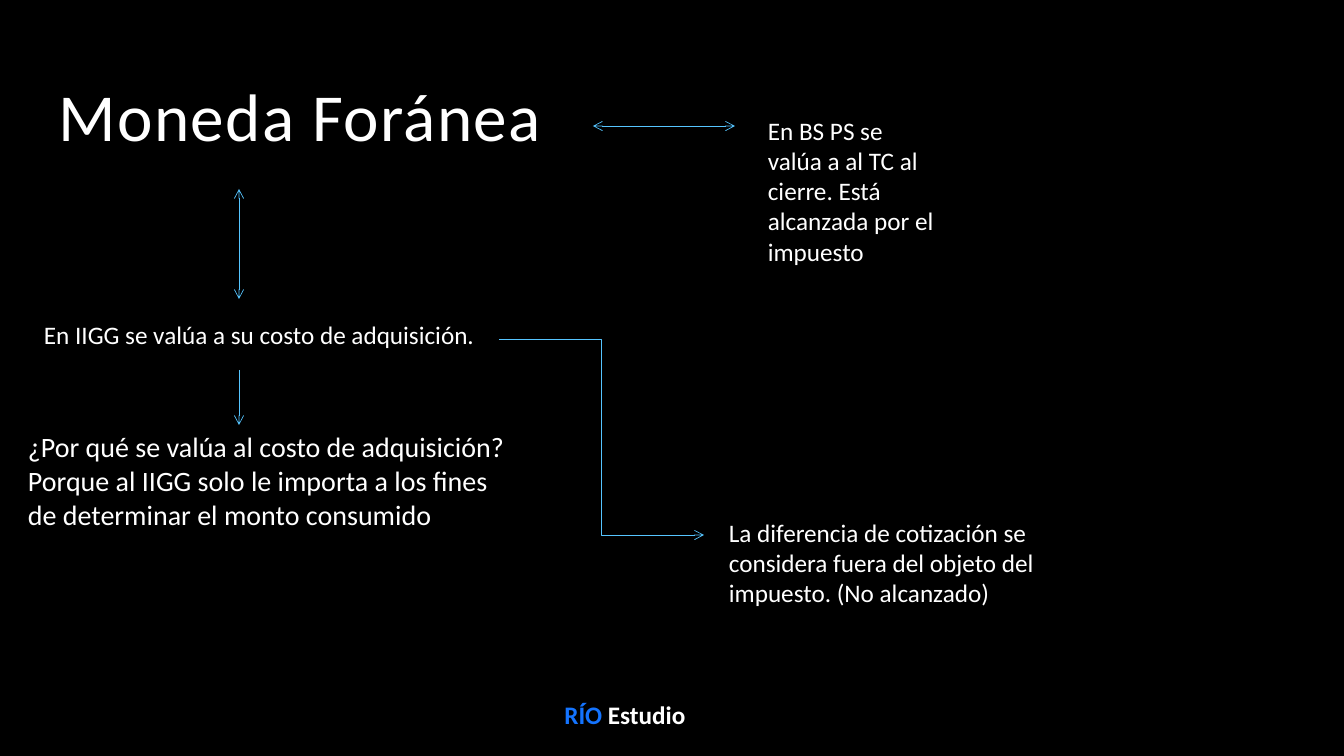
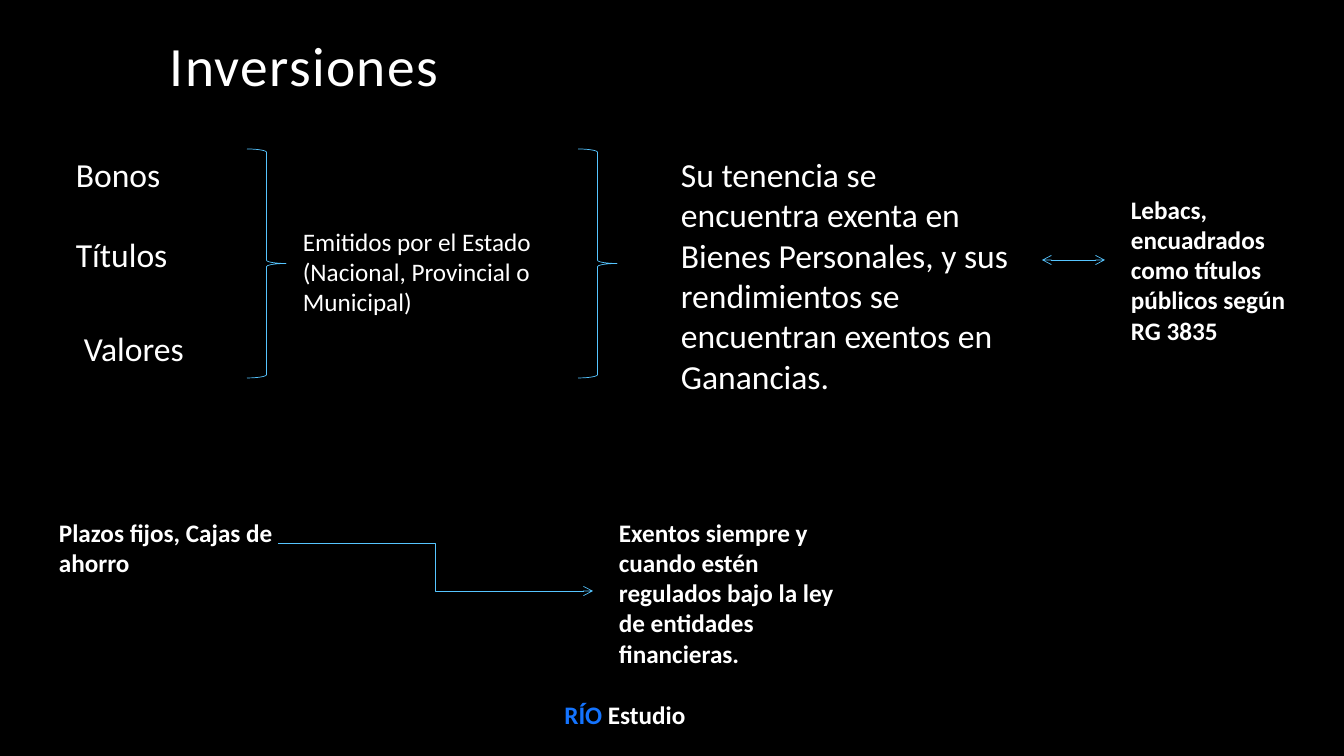
import pptx
import pptx.util
import pptx.dml.color
import pptx.enum.shapes
import pptx.enum.text
import pptx.oxml.ns
import lxml.etree

RGB = pptx.dml.color.RGBColor
BLACK = RGB(0x00, 0x00, 0x00)
WHITE = RGB(0xFF, 0xFF, 0xFF)
SKY = RGB(0x56, 0xC5, 0xFF)
BLUE = RGB(0x14, 0x74, 0xFF)
FONT = "Calibri"
WIDE, HIGH = 1344, 756
SCALE = 914400 / 100.8

Kind = pptx.enum.shapes.MSO_CONNECTOR
Align = pptx.enum.text.PP_ALIGN
Anchor = pptx.enum.text.MSO_ANCHOR


def px(*sizes):
    return [pptx.util.Emu(round(size * SCALE)) for size in sizes]


def write(par, text, size=18, color=WHITE, bold=False, track=0):
    """Add one run to a paragraph; track is letter spacing in points."""
    run = par.add_run()
    run.text = text
    font = run.font
    font.name, font.size, font.bold = FONT, pptx.util.Pt(size), bold
    font.color.rgb = color
    if track:
        run._r.get_or_add_rPr().set("spc", str(track * 100))


class Deck:
    def __init__(self):
        self.show = pptx.Presentation()
        self.show.slide_width, self.show.slide_height = px(WIDE, HIGH)
        self.slide = None

    def page(self):
        """Start a slide with the shared background and footer."""
        self.slide = self.show.slides.add_slide(self.show.slide_layouts[6])
        fill = self.slide.background.fill
        fill.solid()
        fill.fore_color.rgb = BLACK
        par = self.box(444, 694, 362, 40)
        par.alignment = Align.CENTER
        write(par, "RÍO", color=BLUE, bold=True)
        write(par, " Estudio", bold=True)

    def box(self, x, y, w, h, anchor=Anchor.TOP):
        frame = self.slide.shapes.add_textbox(*px(x, y, w, h)).text_frame
        frame.word_wrap = True
        frame.vertical_anchor = anchor
        return frame.paragraphs[0]

    def text(self, x, y, w, h, text, **style):
        write(self.box(x, y, w, h), text, **style)

    def title(self, x, y, w, h, text, size, anchor=Anchor.TOP):
        par = self.box(x, y, w, h, anchor)
        par.line_spacing = 0.9
        write(par, text, size=size, track=1)

    def stroke(self, item):
        item.line.color.rgb = SKY
        item.line.width = pptx.util.Pt(0.5)

    def arrow(self, x1, y1, x2, y2, kind=Kind.STRAIGHT, both=False):
        item = self.slide.shapes.add_connector(kind, *px(x1, y1, x2, y2))
        self.stroke(item)
        qn = pptx.oxml.ns.qn
        line = item.line._get_or_add_ln()
        for end in ("headEnd", "tailEnd") if both else ("tailEnd",):
            lxml.etree.SubElement(line, qn("a:" + end), type="arrow")
        lxml.etree.SubElement(item._element.spPr, qn("a:effectLst"))

    def brace(self, x, y, w, h):
        shape = pptx.enum.shapes.MSO_SHAPE.RIGHT_BRACE
        item = self.slide.shapes.add_shape(shape, *px(x, y, w, h))
        item.shadow.inherit = False
        item.fill.background()
        self.stroke(item)


def money(deck):
    deck.page()
    deck.title(49, 79, 551, 95, "Moneda Foránea", 48)

    # Personal assets tax
    deck.arrow(593, 126, 735, 126, both=True)
    deck.text(758, 110, 190, 163, "En BS PS se valúa a al TC al cierre. "
              "Está alcanzada por el impuesto")

    # Income tax and the reason for its rule
    deck.arrow(239, 189, 239, 299, both=True)
    deck.text(34, 314, 465, 40, "En IIGG se valúa a su costo de adquisición.")
    deck.arrow(239, 370, 239, 425)
    deck.text(18, 425, 504, 112, "¿Por qué se valúa al costo de adquisición? "
              "Porque al IIGG solo le importa a los fines de determinar "
              "el monto consumido", size=20)

    # Exchange difference
    deck.arrow(499, 339, 704, 535, Kind.ELBOW)
    deck.text(719, 512, 370, 102, "La diferencia de cotización se considera "
              "fuera del objeto del impuesto. (No alcanzado)")


def invest(deck):
    deck.page()
    deck.title(160, 39, 1008, 64, "Inversiones", 39.6, Anchor.BOTTOM)

    # Public securities and their treatment
    for x, y, word in ((66, 149, "Bonos"), (66, 229, "Títulos"),
                       (74, 323, "Valores")):
        deck.text(x, y, 190, 50, word, size=24)
    for x in (247, 578):
        deck.brace(x, 149, 39, 229)
    deck.text(293, 221, 260, 102,
              "Emitidos por el Estado (Nacional, Provincial o Municipal)")
    deck.text(671, 149, 355, 254, "Su tenencia se encuentra exenta en Bienes "
              "Personales, y sus rendimientos se encuentran exentos en "
              "Ganancias.", size=24)
    deck.arrow(1042, 260, 1105, 260, both=True)
    deck.text(1121, 189, 197, 163, "Lebacs, encuadrados como títulos públicos "
              "según RG 3835", bold=True)

    # Bank deposits
    deck.text(49, 512, 236, 72, "Plazos fijos, Cajas de ahorro", bold=True)
    deck.arrow(278, 543, 593, 591, Kind.ELBOW)
    deck.text(609, 512, 260, 163, "Exentos siempre y cuando estén regulados "
              "bajo la ley de entidades financieras.", bold=True)


def main():
    deck = Deck()
    money(deck)
    invest(deck)
    deck.show.save("out.pptx")


if __name__ == "__main__":
    main()
